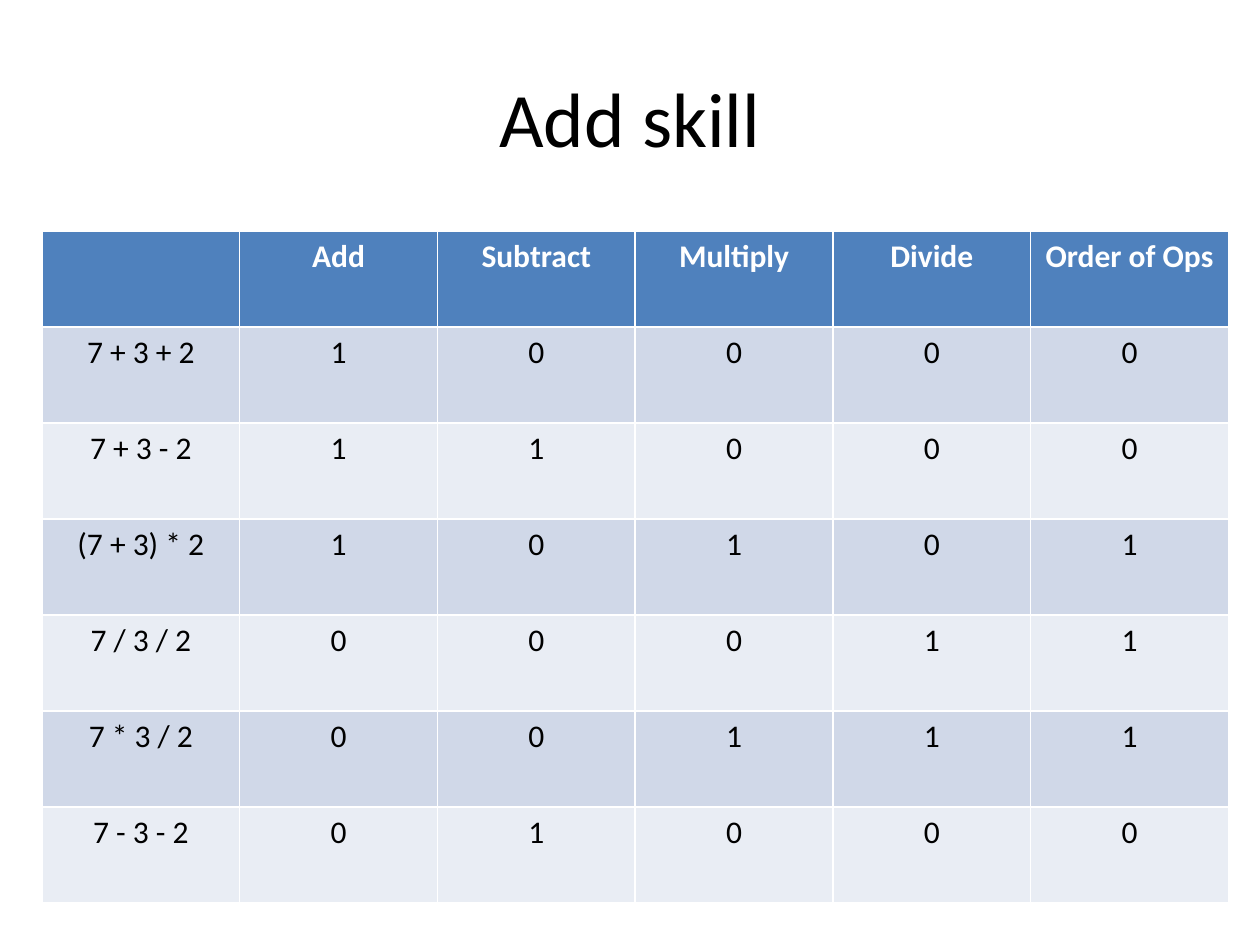
from pptx import Presentation
from pptx.dml.color import RGBColor
from pptx.enum.text import MSO_ANCHOR, PP_ALIGN
from pptx.util import Pt

CENTER = PP_ALIGN.CENTER
MIDDLE = MSO_ANCHOR.MIDDLE
HEADER_FILL = "4F81BD"
BAND_FILLS = ["D0D8E8", "E9EDF4"]


def color(hex_code):
    return RGBColor.from_string(hex_code)


def write(frame, text, size=18, ink="000000", bold=False, font="Calibri"):
    paragraph = frame.paragraphs[0]
    paragraph.alignment = CENTER
    run = paragraph.add_run()
    run.text = text
    run.font.name = font
    run.font.size = Pt(size)
    run.font.bold = bold
    run.font.color.rgb = color(ink)


prs = Presentation()
prs.slide_width, prs.slide_height = Pt(720), Pt(540)
slide = prs.slides.add_slide(prs.slide_layouts[5])

# Title
title = slide.shapes.title
title.left, title.top, title.width, title.height = Pt(36), Pt(21.6), Pt(648), Pt(90)
title.text_frame.vertical_anchor = MIDDLE
write(title.text_frame, "Add skill", size=44)

# Skills needed by each expression
skills = ["", "Add", "Subtract", "Multiply", "Divide", "Order of Ops"]
expressions = [
    ("7 + 3 + 2", 1, 0, 0, 0, 0),
    ("7 + 3 - 2", 1, 1, 0, 0, 0),
    ("(7 + 3) * 2", 1, 0, 1, 0, 1),
    ("7 / 3 / 2", 0, 0, 0, 1, 1),
    ("7 * 3 / 2", 0, 0, 1, 1, 1),
    ("7 - 3 - 2", 0, 1, 0, 0, 0),
]
rows = [skills, *expressions]

# Table: equal rows and columns, white rules from the default table style
skill_table = slide.shapes.add_table(
    len(rows), len(skills), Pt(24), Pt(132), Pt(678), Pt(384)
).table

for r, row in enumerate(rows):
    is_header = r == 0
    fill = HEADER_FILL if is_header else BAND_FILLS[(r - 1) % 2]
    ink = "FFFFFF" if is_header else "000000"
    for c, entry in enumerate(row):
        cell = skill_table.cell(r, c)
        cell.fill.solid()
        cell.fill.fore_color.rgb = color(fill)
        if entry != "":
            write(cell.text_frame, str(entry), ink=ink, bold=is_header)

prs.save("out.pptx")
